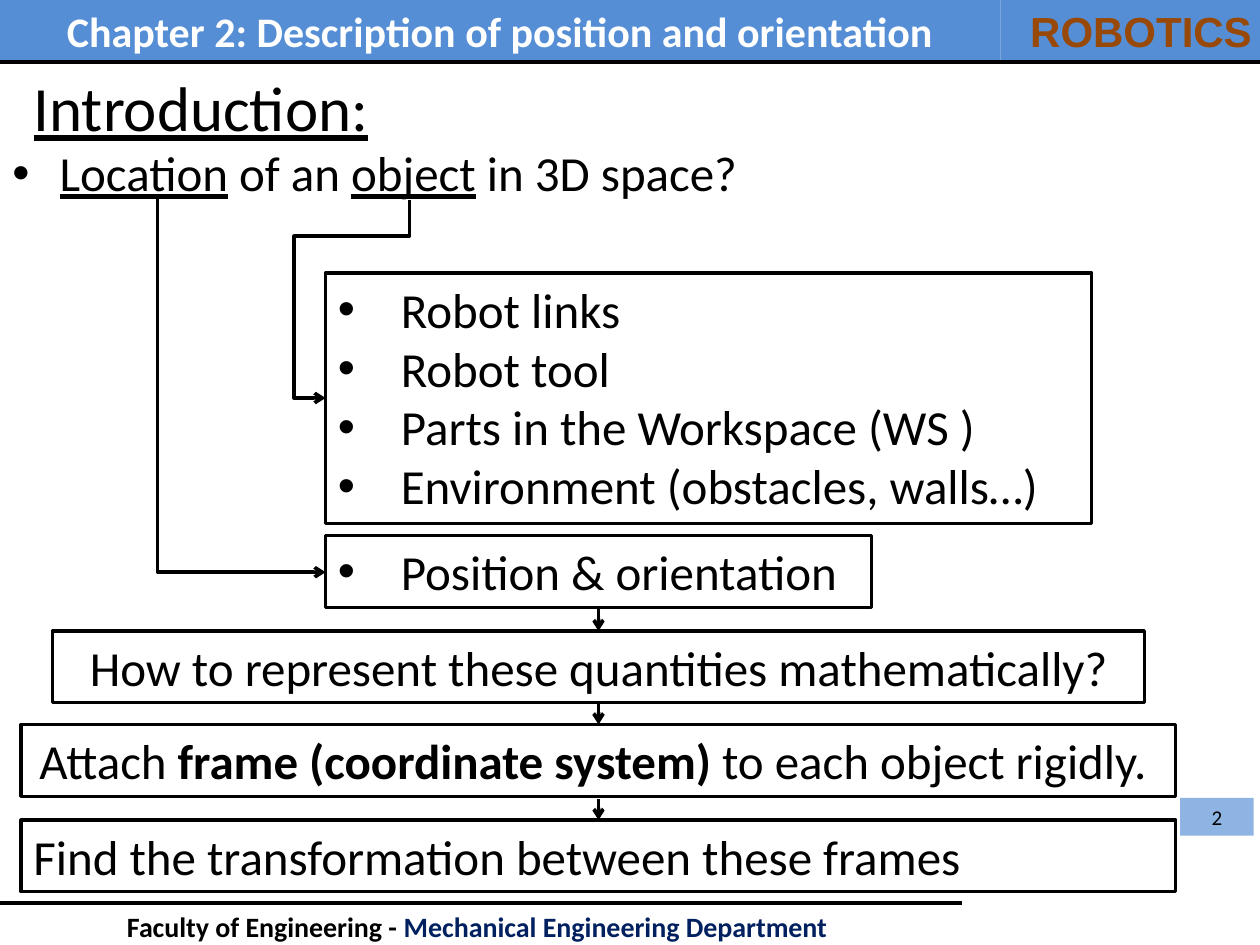
from dataclasses import dataclass, field
from typing import Optional

from lxml import etree
from pptx import Presentation
from pptx import util as u
from pptx.dml.color import RGBColor
from pptx.enum import shapes, text
from pptx.oxml import ns

HUES = {"ink": "000000", "bar": "558ED5", "white": "FFFFFF",
        "brown": "984807", "navy": "002060", "tag": "8EB4E3"}
COLS = 120
LEFT, MID, RIGHT = text.PP_ALIGN.LEFT, text.PP_ALIGN.CENTER, text.PP_ALIGN.RIGHT
TALL = 6.85
AXIS = 57
EDGE = 31


@dataclass
class Run:
    words: str
    form: dict = field(default_factory=dict)
    hue: str = "ink"


@dataclass
class Box:
    area: tuple
    paras: list
    size: int = 28
    face: str = "Calibri"
    align: int = LEFT
    fill: Optional[str] = None
    line: Optional[str] = "ink"
    hang: float = 0
    anchor: int = text.MSO_ANCHOR.TOP


@dataclass
class Link:
    start: tuple
    end: tuple
    arrow: bool = True
    bend: Optional[str] = None
    turn: int = 0
    flip: bool = False
    adjs: tuple = ()


BOLD = {"bold": True}
LINED = {"underline": True}

HEADS = [
    Box((-0.1, -0.1, 95.4, 6), [[Run("Chapter 2: Description of position and orientation", BOLD, "white")]],
        24, align=MID, fill="bar", line=None),
    Box((-0.1, 86, 91.7, 4.4), [[Run("Faculty of Engineering - ", BOLD),
                                 Run("Mechanical Engineering Department ", BOLD, "navy")]],
        16, align=MID, line=None),
    Box((95.3, -0.1, 25.1, 6), [[Run("ROBOTICS", BOLD, "brown")]],
        24, "Arial", RIGHT, "bar", None),
]
TITLE = Box((2, 5.9, 118, 8.5), [[Run("Introduction:", LINED)]], 36,
            line=None, anchor=text.MSO_ANCHOR.MIDDLE)
BOXES = [
    Box((0, 13, 117, 73), [[Run("Location", LINED), Run(" of an "), Run("object", LINED),
                            Run(" in 3D space?")]],
        align=text.PP_ALIGN.JUSTIFY, line=None, hang=4.5),
    Box((EDGE, 26, 73, 23.9), [[Run(item)] for item in (
        "Robot links", "Robot tool", "Parts in the Workspace (WS )",
        "Environment (obstacles, walls…)")], hang=6),
    Box((EDGE, 51, 52, TALL), [[Run("Position & orientation")]], hang=6),
    Box((5, 60.1, 104, TALL), [[Run("How to represent these quantities mathematically?")]], align=MID),
    Box((2, 69, 110, TALL), [[Run("Attach "), Run("frame (coordinate system) ", BOLD),
                              Run("to each object rigidly. ")]], align=MID),
    Box((2, 78.1, 110, TALL), [[Run("Find the transformation between these frames")]]),
    Box((112.4, 76, 7, 3.6), [[Run("2")]], 12, align=MID, fill="tag", line=None,
        anchor=text.MSO_ANCHOR.MIDDLE),
]
LINKS = [
    Link((0, 86), (91.6, 86), False),
    Link((0, 5.9), (120.3, 5.9), False),
    Link((39, 19), (EDGE, 37.9), bend="bentConnector4", turn=90, adjs=(18500, 137500)),
    Link((15, 19), (EDGE, 54.5), bend="bentConnector2", turn=270, flip=True),
] + [Link((AXIS, top), (AXIS, end)) for top, end in ((57.85, 60.1), (66.95, 69), (76.1, 78.1))]


def grid(n: float) -> int:
    return u.Inches(n * 10 / COLS)


def tint(name: str) -> RGBColor:
    return RGBColor.from_string(HUES[name])


def sub(node, tag: str, **attrs):
    return etree.SubElement(node, ns.qn(tag), attrs)


def apply(thing, form: dict) -> None:
    for name, value in form.items():
        setattr(thing, name, value)


def place(shape, area: tuple) -> None:
    apply(shape, dict(zip(("left", "top", "width", "height"), map(grid, area))))


def write(frame, box: Box, fit: int) -> None:
    apply(frame, {"word_wrap": True, "auto_size": fit, "vertical_anchor": box.anchor})
    for i, runs in enumerate(box.paras):
        para = frame.add_paragraph() if i else frame.paragraphs[0]
        para.alignment = box.align
        if box.hang:
            props = para._p.get_or_add_pPr()
            props.set("marL", str(grid(box.hang)))
            props.set("indent", str(-grid(box.hang)))
            sub(props, "a:buFont", typeface="Arial")
            sub(props, "a:buChar", char="•")
        for run in runs:
            part = para.add_run()
            part.text = run.words
            apply(part.font, {"size": u.Pt(box.size), "name": box.face, **run.form})
            part.font.color.rgb = tint(run.hue)


def draw(slide, box: Box) -> None:
    fit = text.MSO_AUTO_SIZE.SHAPE_TO_FIT_TEXT
    if box.fill or box.line:
        shape = slide.shapes.add_shape(shapes.MSO_SHAPE.RECTANGLE, *map(grid, box.area))
        shape.shadow.inherit = False
        if box.fill:
            shape.fill.solid()
            shape.fill.fore_color.rgb = tint(box.fill)
        else:
            shape.fill.background()
        if box.line:
            shape.line.color.rgb = tint(box.line)
            shape.line.width = u.Pt(1.75)
        else:
            shape.line.fill.background()
    else:
        shape = slide.shapes.add_textbox(*map(grid, box.area))
        if box.hang:
            fit = text.MSO_AUTO_SIZE.NONE
    write(shape.text_frame, box, fit)


def join(slide, link: Link) -> None:
    kind = shapes.MSO_CONNECTOR.ELBOW if link.bend else shapes.MSO_CONNECTOR.STRAIGHT
    (x1, y1), (x2, y2) = link.start, link.end
    if link.bend:
        wide, high = abs(y2 - y1), abs(x2 - x1)
        left, top = (x1 + x2 - wide) / 2, (y1 + y2 - high) / 2
        x1, y1, x2, y2 = left, top, left + wide, top + high
    line = slide.shapes.add_connector(kind, *map(grid, (x1, y1, x2, y2)))
    props = line._element.spPr
    if link.bend:
        frame = props.find(ns.qn("a:xfrm"))
        frame.set("rot", str(link.turn * 60000))
        if link.flip:
            frame.set("flipH", "1")
        geom = props.find(ns.qn("a:prstGeom"))
        geom.set("prst", link.bend)
        guides = geom.find(ns.qn("a:avLst"))
        for i, adj in enumerate(link.adjs, 1):
            sub(guides, "a:gd", name=f"adj{i}", fmla=f"val {adj}")
    line.line.color.rgb = tint("ink")
    line.line.width = u.Pt(2)
    if link.arrow:
        sub(line.line._get_or_add_ln(), "a:tailEnd", type="arrow")
    sub(props, "a:effectLst")


def main() -> None:
    deck = Presentation()
    apply(deck, {"slide_width": u.Inches(10), "slide_height": u.Inches(7.5)})
    slide = deck.slides.add_slide(deck.slide_layouts[5])
    title = slide.shapes.title
    place(title, TITLE.area)
    write(title.text_frame, TITLE, text.MSO_AUTO_SIZE.NONE)
    for box in HEADS + BOXES:
        draw(slide, box)
    for link in LINKS:
        join(slide, link)
    deck.save("out.pptx")


if __name__ == "__main__":
    main()
